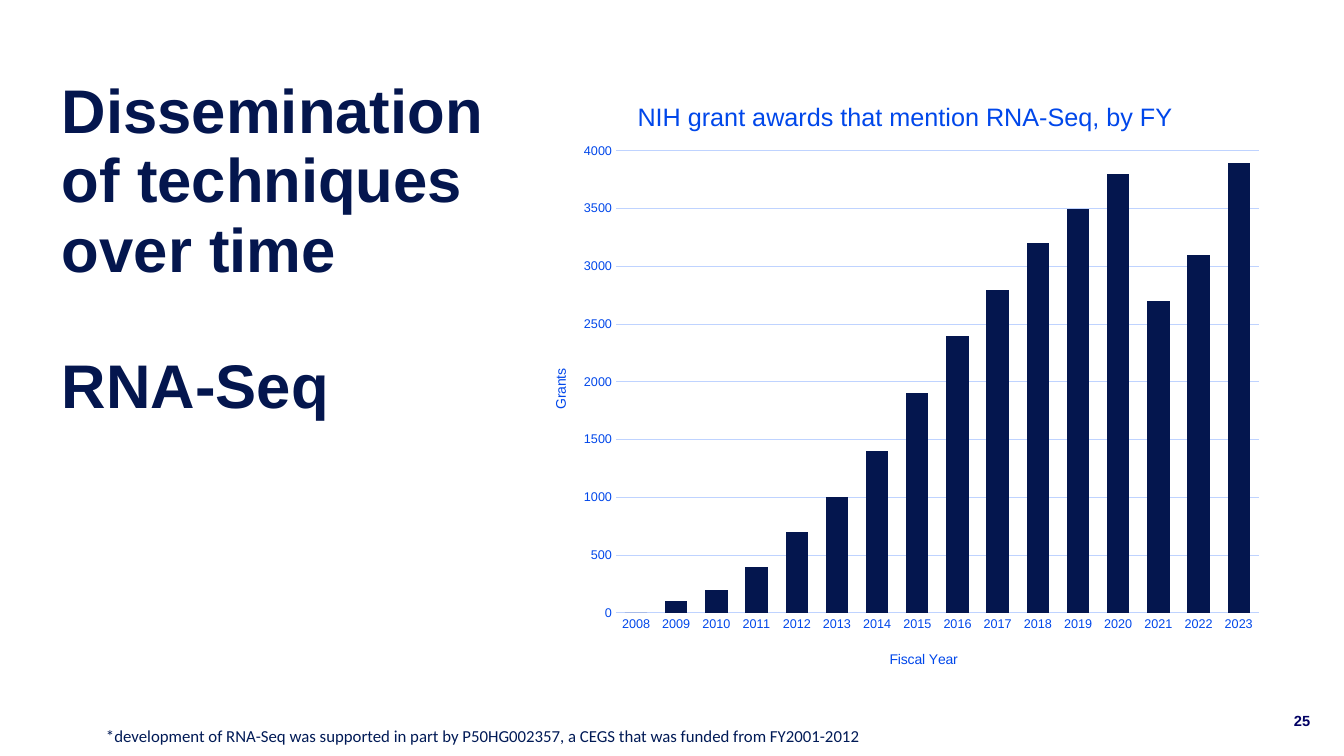
import pptx
import pptx.chart.data
import pptx.dml.color
import pptx.enum.chart
import pptx.enum.text
import pptx.oxml
import pptx.util
from pptx.oxml.ns import qn

PX = 914400 / 100.8
NAVY = pptx.dml.color.RGBColor(0x04, 0x16, 0x4E)
INK = pptx.dml.color.RGBColor(0x00, 0x1A, 0x56)
NUMBER_BLUE = pptx.dml.color.RGBColor(0x00, 0x00, 0x64)
BLUE = pptx.dml.color.RGBColor(0x00, 0x47, 0xEA)
PALE_BLUE = pptx.dml.color.RGBColor(0xBF, 0xD3, 0xFF)
CHART_LEFT, CHART_TOP, CHART_WIDTH, CHART_HEIGHT = 526, 71, 748, 614

deck = pptx.Presentation()
deck.slide_width = round(1344 * PX)
deck.slide_height = round(756 * PX)
page = deck.slides.add_slide(deck.slide_layouts[6])


def add_text(text, left, top, width, height, size, color, font="Arial", bold=False,
             anchor=pptx.enum.text.MSO_ANCHOR.TOP, inset=10, line_spacing=None, gap=0):
    box = page.shapes.add_textbox(*(round(n * PX) for n in (left, top, width, height)))
    frame = box.text_frame
    frame.word_wrap = True
    frame.vertical_anchor = anchor
    frame.margin_left = round(inset * PX)
    for index, line in enumerate(text.split("\n")):
        para = frame.add_paragraph() if index else frame.paragraphs[0]
        if index:
            para.space_before = pptx.util.Pt(gap)
        if line_spacing:
            para.line_spacing = line_spacing
        span = para.add_run()
        span.text = line
        span.font.name = font
        span.font.size = pptx.util.Pt(size)
        span.font.bold = bold
        span.font.color.rgb = color


def place_in_chart(element, left, top, width=None, height=None):
    """Fix a chart part at page pixels, stored as fractions of the chart."""
    layout = element.find(qn("c:layout"))
    if layout is None:
        layout = pptx.oxml.parse_xml(
            '<c:layout xmlns:c="http://schemas.openxmlformats.org/drawingml/2006/chart"/>')
        element.insert(0, layout)
    manual = layout.makeelement(qn("c:manualLayout"), {})
    layout.append(manual)
    settings = [("xMode", "edge"), ("yMode", "edge"),
                ("x", (left - CHART_LEFT) / CHART_WIDTH),
                ("y", (top - CHART_TOP) / CHART_HEIGHT)]
    if width:
        settings.insert(0, ("layoutTarget", "inner"))
        settings += [("w", width / CHART_WIDTH), ("h", height / CHART_HEIGHT)]
    for name, value in settings:
        manual.append(manual.makeelement(qn("c:" + name), {"val": str(value)}))


# Heading
add_text("Dissemination of techniques over time\nRNA-Seq", 62, 116, 437, 268, 44, NAVY,
         bold=True, anchor=pptx.enum.text.MSO_ANCHOR.MIDDLE, inset=0,
         line_spacing=0.94, gap=47.5)

# Page number
add_text("25", 1284, 701, 38, 40, 10.5, NUMBER_BLUE, bold=True,
         anchor=pptx.enum.text.MSO_ANCHOR.MIDDLE)

# Grants per fiscal year
grants = pptx.chart.data.CategoryChartData()
grants.categories = [str(year) for year in range(2008, 2024)]
grants.add_series("Series 1", [0, 100, 200, 400, 700, 1000, 1400, 1900,
                               2400, 2800, 3200, 3500, 3800, 2700, 3100, 3900])
chart = page.shapes.add_chart(
    pptx.enum.chart.XL_CHART_TYPE.COLUMN_CLUSTERED,
    *(round(n * PX) for n in (CHART_LEFT, CHART_TOP, CHART_WIDTH, CHART_HEIGHT)),
    grants).chart
chart.has_legend = False
chart.font.name = "Arial"
chart.font.size = pptx.util.Pt(10)
chart.font.color.rgb = INK
place_in_chart(chart._chartSpace.chart.plotArea, 616, 151, 643, 462)

# Columns
plot = chart.plots[0]
plot.gap_width = 80
plot.overlap = -27
plot.vary_by_categories = False
columns = plot.series[0]
columns.invert_if_negative = False
columns.format.fill.solid()
columns.format.fill.fore_color.rgb = NAVY

# Axes
years, amounts = chart.category_axis, chart.value_axis
for axis in (years, amounts):
    axis.major_tick_mark = pptx.enum.chart.XL_TICK_MARK.NONE
    axis.minor_tick_mark = pptx.enum.chart.XL_TICK_MARK.NONE
    axis.tick_labels.font.name = "Arial"
    axis.tick_labels.font.size = pptx.util.Pt(9)
    axis.tick_labels.font.color.rgb = BLUE
amounts.minimum_scale = 0
amounts.maximum_scale = 4000
amounts.major_unit = 500
amounts.has_major_gridlines = True
amounts.format.line.fill.background()
for line in (years.format.line, amounts.major_gridlines.format.line):
    line.color.rgb = PALE_BLUE
    line.width = pptx.util.Pt(0.75)

# Chart and axis titles
chart.has_title = True
for title, text, size, left, top in (
        (chart.chart_title, "NIH grant awards that mention RNA-Seq, by FY", 18, 633, 96),
        (years.axis_title, "Fiscal Year", 10, 887, 648),
        (amounts.axis_title, "Grants", 10, 549, 366)):
    title.text_frame.text = text
    font = title.text_frame.paragraphs[0].runs[0].font
    font.name = "Arial"
    font.size = pptx.util.Pt(size)
    font.bold = False
    font.color.rgb = BLUE
    place_in_chart(title._element, left, top)

# Footnote
add_text("*development of RNA-Seq was supported in part by P50HG002357, "
         "a CEGS that was funded from FY2001-2012",
         96, 721, 840, 30, 12, INK, font="Calibri")

deck.save("out.pptx")
